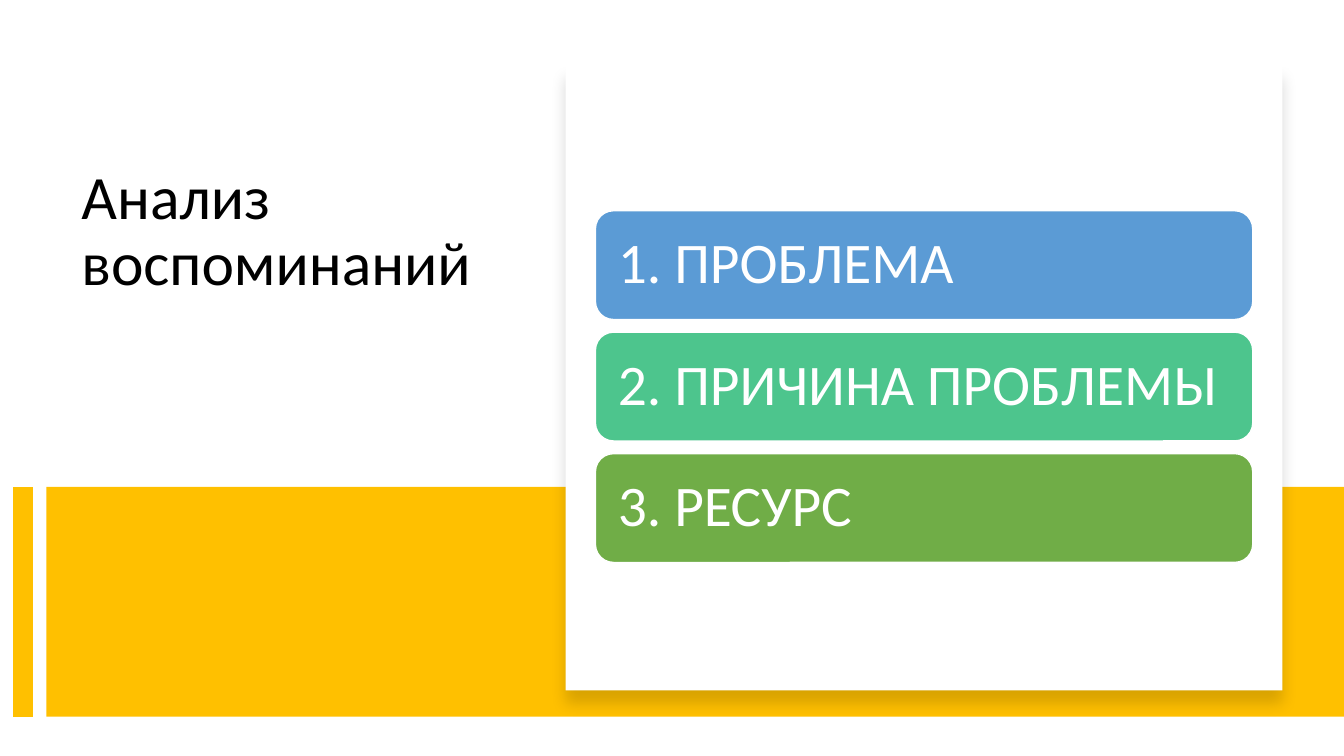
from dataclasses import dataclass

from lxml import etree
from pptx import Presentation
from pptx import util as u
from pptx.dml.color import RGBColor
from pptx.enum import shapes, text
from pptx.oxml.ns import qn


@dataclass(frozen=True)
class Theme:
    font: str = "Calibri"
    ink: str = "000000"
    paper: str = "FFFFFF"
    accent: str = "FFC000"
    steps: tuple = ("5B9BD5", "4DC58D", "70AD47")
    title_size: int = 44
    step_size: int = 41


THEME = Theme()
STEPS = ("1. ПРОБЛЕМА", "2. ПРИЧИНА ПРОБЛЕМЫ", "3. РЕСУРС")


def add_block(slide, box, fill, kind=shapes.MSO_SHAPE.RECTANGLE, outline=None):
    block = slide.shapes.add_shape(kind, *map(u.Inches, box))
    block.shadow.inherit = False
    block.fill.solid()
    block.fill.fore_color.rgb = RGBColor.from_string(fill)
    if outline:
        block.line.color.rgb = RGBColor.from_string(outline)
        block.line.width = u.Pt(1)
    else:
        block.line.fill.background()
    return block


def write(holder, words, *, size, color, anchor, inset_x=0.1, inset_y=0.05):
    frame = holder.text_frame
    frame.word_wrap = True
    frame.vertical_anchor = anchor
    frame.margin_left = frame.margin_right = u.Inches(inset_x)
    frame.margin_top = frame.margin_bottom = u.Inches(inset_y)
    paragraph = frame.paragraphs[0]
    paragraph.alignment = text.PP_ALIGN.LEFT
    paragraph.line_spacing = 0.9
    run = paragraph.add_run()
    run.text = words
    run.font.name = THEME.font
    run.font.size = u.Pt(size)
    run.font.color.rgb = RGBColor.from_string(color)


def add_soft_shadow(block):
    """Cast a faint shadow straight down."""
    effects = block._element.spPr.find(qn("a:effectLst"))
    shadow = etree.SubElement(
        effects, qn("a:outerShdw"), blurRad=str(u.Pt(11)), dist=str(u.Pt(10)),
        dir="5400000", algn="t", rotWithShape="0")
    color = etree.SubElement(shadow, qn("a:srgbClr"), val=THEME.ink)
    etree.SubElement(color, qn("a:alpha"), val="15000")


def add_title(slide, box):
    title = slide.shapes.add_textbox(*map(u.Inches, box))
    write(title, "Анализ воспоминаний", size=THEME.title_size, color=THEME.ink,
          anchor=text.MSO_ANCHOR.TOP)


def add_band(slide, box):
    """Draw the wide band and the upright stripe at its left end."""
    left, top, width, height = box
    stripe_offset = 0.23
    add_block(slide, (left + 2 * stripe_offset, top, width - 2 * stripe_offset, height),
              THEME.accent)
    stripe_x = u.Inches(left + stripe_offset)
    stripe = slide.shapes.add_connector(
        shapes.MSO_CONNECTOR.STRAIGHT, stripe_x, u.Inches(top),
        stripe_x, u.Inches(top + height))
    stripe.line.color.rgb = RGBColor.from_string(THEME.accent)
    stripe.line.width = u.Pt(14)
    etree.SubElement(stripe._element.spPr, qn("a:effectLst"))


def add_steps_panel(slide, box):
    """Draw the raised panel with the step cards centred in it."""
    left, top, width, height = box
    add_soft_shadow(add_block(slide, box, THEME.paper))
    card_width, card_height, pitch = 6.52, 1.08, 1.205
    stack_height = pitch * (len(STEPS) - 1) + card_height
    card_left = left + (width - card_width) / 2
    first_top = top + (height - stack_height) / 2 + 0.09
    for index, (step, fill) in enumerate(zip(STEPS, THEME.steps)):
        card = add_block(
            slide, (card_left, first_top + index * pitch, card_width, card_height),
            fill, shapes.MSO_SHAPE.ROUNDED_RECTANGLE, THEME.paper)
        write(card, step, size=THEME.step_size, color=THEME.paper,
              anchor=text.MSO_ANCHOR.MIDDLE, inset_x=0.17, inset_y=0.17)


def main():
    deck = Presentation()
    deck.slide_width, deck.slide_height = u.Inches(13.33), u.Inches(7.5)
    slide = deck.slides.add_slide(deck.slide_layouts[6])
    slide.background.fill.solid()
    slide.background.fill.fore_color.rgb = RGBColor.from_string(THEME.paper)
    add_title(slide, (0.71, 1.6, 4.15, 2.94))
    add_band(slide, (0, 4.83, 13.33, 2.28))
    add_steps_panel(slide, (5.61, 0.64, 7.11, 6.21))
    deck.save("out.pptx")


if __name__ == "__main__":
    main()
